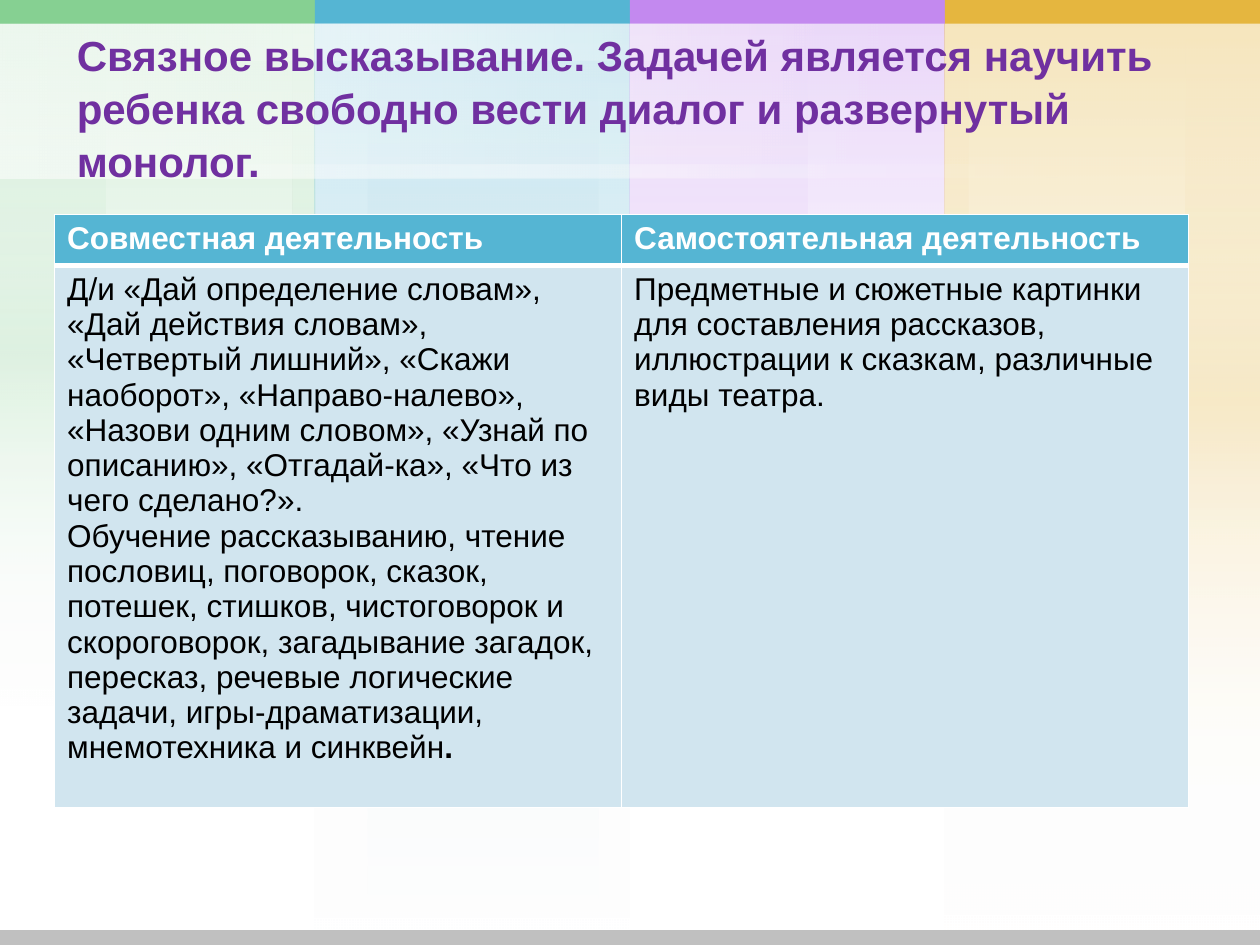
from lxml import etree
from pptx import Presentation
from pptx import util as u
from pptx.dml.color import RGBColor
from pptx.enum import shapes, text
from pptx.oxml import ns

Pt = u.Pt

THEME = {
    "font": "Arial", "title_size": 24, "table_size": 18,
    "title": "7030A0", "white": "FFFFFF", "ink": "000000", "footer": "C0C0C0",
    "green": "86D092", "blue": "55B5D3", "violet": "C389EF", "gold": "E5B63F",
    "body_fill": "D1E5EF",
}
WIDTH, HEIGHT = 720, 540
COLUMN, STRIPE = WIDTH / 4, 13.5
TINT, GLOW = 20, 35

TITLE = ("Связное высказывание. Задачей является научить ребенка свободно "
         "вести диалог и развернутый монолог.")
HEADERS = ["Совместная деятельность", "Самостоятельная деятельность"]
# Each cell is a list of paragraphs; each paragraph is a list of (words, bold) spans.
BODY = [
    [
        [("Д/и «Дай определение словам», «Дай действия словам», «Четвертый лишний», "
          "«Скажи наоборот», «Направо-налево», «Назови одним словом», «Узнай по описанию», "
          "«Отгадай-ка», «Что из чего сделано?».", False)],
        [("Обучение рассказыванию, чтение пословиц, поговорок, сказок, потешек, стишков, "
          "чистоговорок и скороговорок, загадывание загадок, пересказ, речевые логические "
          "задачи, игры-драматизации, мнемотехника и синквейн", False), (".", True)],
    ],
    [
        [("Предметные и сюжетные картинки для составления рассказов, "
          "иллюстрации к сказкам, различные виды театра.", False)],
    ],
]

# Colour, fade height, accent height, accents as (offset in column, width).
CURTAINS = [
    ("green", 405, 405, [(167, 13), (0, 60.5)]),
    ("blue", 540, 540, [(30, 132)]),
    ("violet", 405, 405, [(0, 101.5)]),
    ("gold", 538, 459, [(0, 13.5), (137.5, 42.5)]),
]
# Left, top, width, height before a quarter turn; whether the glow peaks midway.
GLOWS = [
    (299.5, -205.2, 7.2, 606.2, True),
    (226.8, -212.4, 87.8, 540.7, False),
    (220.3, -206.6, 20.9, 461.5, True),
    (226.8, -212.4, 87.8, 540.7, False),
]


def color(name):
    return RGBColor.from_string(THEME[name])


def add_rect(slide, left, top, width, height):
    rect = slide.shapes.add_shape(shapes.MSO_SHAPE.RECTANGLE,
                                  Pt(left), Pt(top), Pt(width), Pt(height))
    rect.shadow.inherit = False
    rect.line.fill.background()
    return rect


def add_solid(slide, name, *frame):
    rect = add_rect(slide, *frame)
    rect.fill.solid()
    rect.fill.fore_color.rgb = color(name)


def add_fade(slide, name, opacity, peaks_midway, *frame):
    """Add a rectangle that fades to clear white, from its top edge or its middle."""
    rect = add_rect(slide, *frame)
    rect.fill.background()
    old = rect.element.spPr.find(ns.qn("a:noFill"))
    fill = etree.Element(ns.qn("a:gradFill"), rotWithShape="1")
    stops = etree.SubElement(fill, ns.qn("a:gsLst"))
    strong, clear = (name, opacity), ("white", 0)
    ramp = [clear, strong, clear] if peaks_midway else [strong, clear]
    for index, (tone, alpha) in enumerate(ramp):
        position = index * 100000 // (len(ramp) - 1)
        stop = etree.SubElement(stops, ns.qn("a:gs"), pos=str(position))
        rgb = etree.SubElement(stop, ns.qn("a:srgbClr"), val=THEME[tone])
        etree.SubElement(rgb, ns.qn("a:alpha"), val=str(alpha * 1000))
    etree.SubElement(fill, ns.qn("a:lin"), ang="5400000", scaled="0")
    old.getparent().replace(old, fill)
    return rect


def add_backdrop(slide):
    for index, (name, height, accent_height, accents) in enumerate(CURTAINS):
        left = index * COLUMN
        add_fade(slide, name, TINT, False, left, 0, COLUMN, height)
        for offset, width in accents:
            add_fade(slide, name, TINT, True, left + offset, 0, width, accent_height)
        add_fade(slide, name, TINT, False, left, 0, COLUMN, height)
    for index, (name, *_) in enumerate(CURTAINS):
        add_solid(slide, name, index * COLUMN, 0, COLUMN, STRIPE)
    for *frame, peaks_midway in GLOWS:
        add_fade(slide, "white", GLOW, peaks_midway, *frame).rotation = 270
    add_solid(slide, "footer", 0, HEIGHT - 8.5, WIDTH, 8.5)


def style(font, size, name, bold):
    font.name, font.size, font.bold = THEME["font"], Pt(THEME[size]), bold
    font.color.rgb = color(name)


def add_title(slide):
    box = slide.shapes.add_textbox(Pt(36.8), Pt(37.5), Pt(663), Pt(74))
    frame = box.text_frame
    frame.word_wrap = True
    frame.vertical_anchor = text.MSO_ANCHOR.MIDDLE
    frame.margin_bottom = Pt(31)
    para = frame.paragraphs[0]
    para.text = TITLE
    para.line_spacing = 1.05
    style(para.font, "title_size", "title", True)


def paint_cell(cell, fill, bottom):
    cell.fill.solid()
    cell.fill.fore_color.rgb = color(fill)
    props = cell._tc.get_or_add_tcPr()
    for index, (side, width) in enumerate([("L", 1), ("R", 1), ("T", 1), ("B", bottom)]):
        line = etree.Element(ns.qn("a:ln" + side), w=str(Pt(width)))
        solid = etree.SubElement(line, ns.qn("a:solidFill"))
        etree.SubElement(solid, ns.qn("a:srgbClr"), val=THEME["white"])
        props.insert(index, line)


def add_activities(slide):
    table = slide.shapes.add_table(2, 2, Pt(31.2), Pt(122.5), Pt(648), Pt(338.5)).table
    table.rows[0].height, table.rows[1].height = Pt(29.2), Pt(309.3)
    for index, (header, paragraphs) in enumerate(zip(HEADERS, BODY)):
        head, body = table.cell(0, index), table.cell(1, index)
        paint_cell(head, "blue", 3)
        paint_cell(body, "body_fill", 1)
        head.text = header
        style(head.text_frame.paragraphs[0].font, "table_size", "white", True)
        frame = body.text_frame
        for number, spans in enumerate(paragraphs):
            para = frame.add_paragraph() if number else frame.paragraphs[0]
            style(para.font, "table_size", "ink", False)
            for words, bold in spans:
                span = para.add_run()
                span.text = words
                if bold:
                    span.font.bold = True


def main():
    deck = Presentation()
    deck.slide_width, deck.slide_height = Pt(WIDTH), Pt(HEIGHT)
    slide = deck.slides.add_slide(deck.slide_layouts[6])
    add_backdrop(slide)
    add_title(slide)
    add_activities(slide)
    deck.save("out.pptx")


if __name__ == "__main__":
    main()
